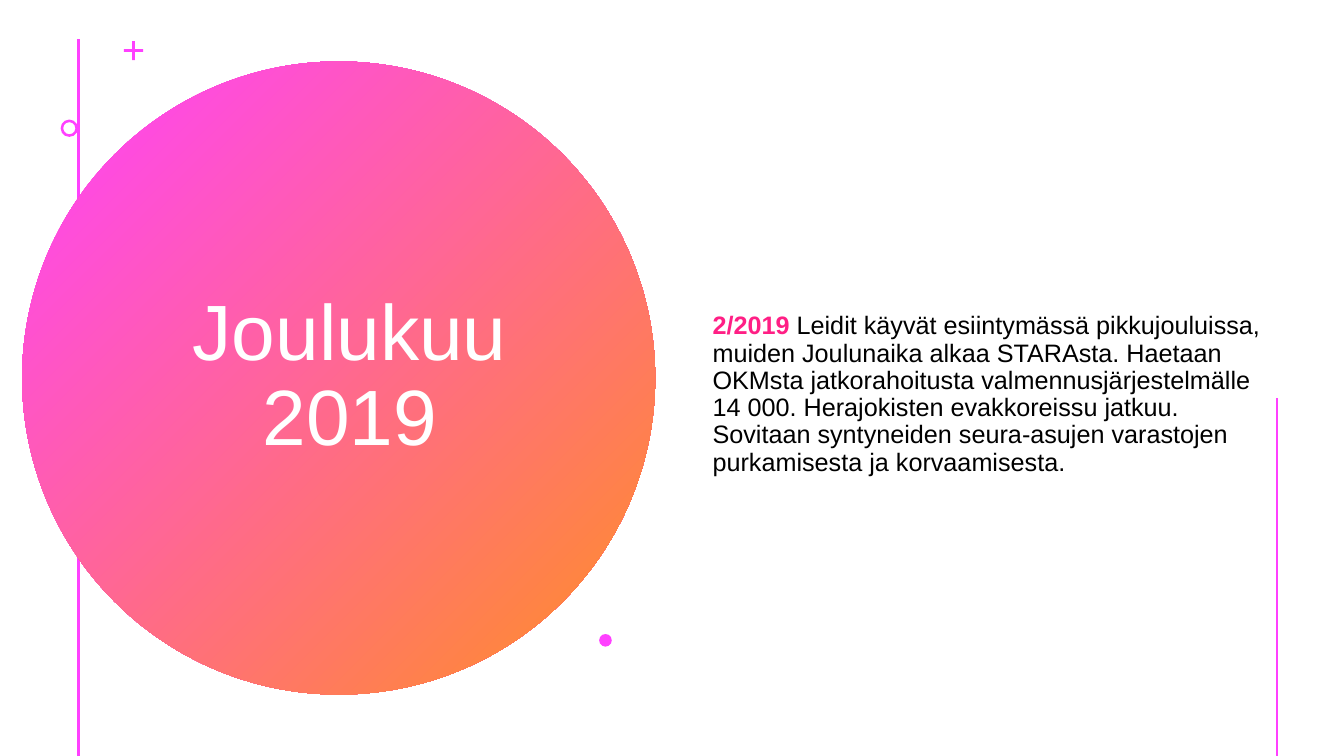
from dataclasses import dataclass

from lxml.etree import SubElement
from pptx import Presentation
from pptx.dml.color import RGBColor
from pptx.enum.shapes import MSO_CONNECTOR, MSO_SHAPE
from pptx.enum.text import MSO_ANCHOR, MSO_AUTO_SIZE, PP_ALIGN
from pptx.oxml.ns import qn
from pptx.util import Pt


@dataclass(frozen=True)
class Theme:
    """Colours, font and sizes of the slide."""
    pink: RGBColor = RGBColor(0xFF, 0x40, 0xFF)
    orange: RGBColor = RGBColor(0xFF, 0x90, 0x22)
    accent: RGBColor = RGBColor(0xFF, 0x1F, 0x85)
    black: RGBColor = RGBColor(0, 0, 0)
    white: RGBColor = RGBColor(0xFF, 0xFF, 0xFF)
    font: str = "Arial"
    title: int = 56
    body: int = 18
    line: int = 2


THEME = Theme()
DATE = "2/2019"
TEXT = (
    " Leidit käyvät esiintymässä pikkujouluissa, muiden Joulunaika alkaa STARAsta. "
    "Haetaan OKMsta jatkorahoitusta valmennusjärjestelmälle 14 000. Herajokisten "
    "evakkoreissu jatkuu. Sovitaan syntyneiden seura-asujen varastojen purkamisesta "
    "ja korvaamisesta."
)


def add_rule(s, x, top, bottom):
    """Draw a vertical rule."""
    c = s.shapes.add_connector(MSO_CONNECTOR.STRAIGHT, Pt(x), Pt(top), Pt(x), Pt(bottom))
    c.line.color.rgb = THEME.pink
    c.line.width = Pt(THEME.line)
    SubElement(c.element.spPr, qn("a:effectLst"))


def add_mark(s, kind, left, top, size, adj=None):
    """Draw a square pink shape without outline and return it."""
    sp = s.shapes.add_shape(kind, Pt(left), Pt(top), Pt(size), Pt(size))
    sp.shadow.inherit = False
    sp.fill.solid()
    sp.fill.fore_color.rgb = THEME.pink
    sp.line.fill.background()
    if adj is not None:
        sp.adjustments[0] = adj
    return sp


def place_text(sp, left, top, width, height):
    """Bring a placeholder to the front of its box and return its text frame."""
    sp.left, sp.top, sp.width, sp.height = Pt(left), Pt(top), Pt(width), Pt(height)
    sp.element.getparent().append(sp.element)
    tf = sp.text_frame
    tf.word_wrap = True
    tf.auto_size = MSO_AUTO_SIZE.NONE
    tf.vertical_anchor = MSO_ANCHOR.MIDDLE
    return tf


def style_paragraph(p, size, color, align):
    """Format a whole paragraph."""
    p.font.name = THEME.font
    p.font.size = Pt(size)
    p.font.color.rgb = color
    p.alignment = align
    p.line_spacing = 0.9


def add_title_circle(s, left, top, size):
    """Draw the gradient circle with the title and the marks around it."""
    circle = add_mark(s, MSO_SHAPE.OVAL, left, top, size)
    circle.fill.gradient()
    circle.fill.gradient_angle = 315
    stops = zip(circle.fill.gradient_stops, (0, 1), (THEME.pink, THEME.orange))
    for stop, position, color in stops:
        stop.position = position
        stop.color.rgb = color

    tf = place_text(s.shapes.title, left + 82, top + 57.6, 304, 336)
    p = tf.paragraphs[0]
    p.text = "Joulukuu 2019"
    style_paragraph(p, THEME.title, THEME.white, PP_ALIGN.CENTER)

    add_mark(s, MSO_SHAPE.CROSS, left + 72.7, top - 14.6, 13.7, 0.43)
    add_mark(s, MSO_SHAPE.DONUT, left + 27.5, top + 41.5, 12.4, 0.15)
    add_mark(s, MSO_SHAPE.OVAL, left + 412.2, top + 409, 9)


def add_notes_text(s, left, top, width, height):
    """Fill the body placeholder with the month's news."""
    tf = place_text(s.placeholders[1], left, top, width, height)
    p = tf.paragraphs[0]
    style_paragraph(p, THEME.body, THEME.black, PP_ALIGN.LEFT)
    p.space_before = Pt(6)
    pPr = p._p.get_or_add_pPr()
    pPr.set("marL", "0")
    pPr.set("indent", "0")
    pPr.insert_element_before(pPr.makeelement(qn("a:buNone")), "a:tabLst", "a:defRPr")
    r = p.add_run()
    r.text = DATE
    r.font.bold = True
    r.font.color.rgb = THEME.accent
    p.add_run().text = TEXT


def main():
    """Build the slide and save it."""
    prs = Presentation()
    prs.slide_width, prs.slide_height = Pt(960), Pt(540)
    s = prs.slides.add_slide(prs.slide_layouts[1])
    add_rule(s, 56.2, 28, 540)
    add_title_circle(s, 15.8, 43.9, 452.2)
    add_notes_text(s, 501.8, 64, 414.7, 436)
    add_rule(s, 912.2, 284.4, 540)
    prs.save("out.pptx")


if __name__ == "__main__":
    main()
